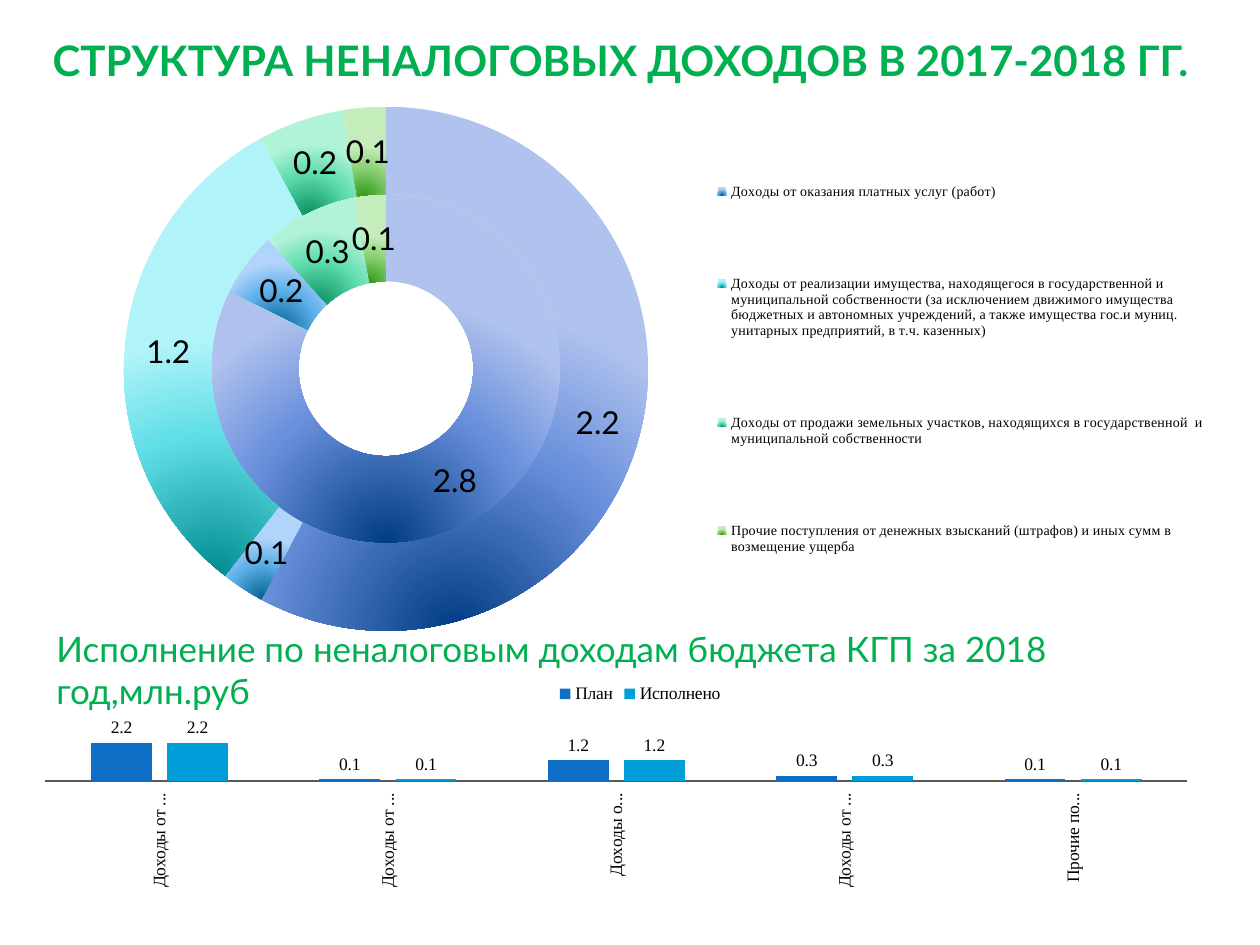
"""Build the slide on the structure of non-tax revenue for 2017-2018."""
from dataclasses import dataclass

from lxml.etree import _Element
from pptx import Presentation
from pptx.chart.chart import Chart
from pptx.chart.data import CategoryChartData
from pptx.dml.color import RGBColor
from pptx.enum.chart import (XL_CHART_TYPE, XL_LABEL_POSITION, XL_LEGEND_POSITION,
                             XL_TICK_LABEL_POSITION, XL_TICK_MARK)
from pptx.enum.text import MSO_ANCHOR, PP_ALIGN
from pptx.oxml import parse_xml
from pptx.oxml.ns import nsdecls, qn
from pptx.slide import Slide
from pptx.text.text import TextFrame
from pptx.util import Emu, Pt

SCALE = 914400 / 126
COLORS = {"title": "00B050", "outline": "20C9F8", "text": "000000",
          "axis": "595959", "plan": "0F6FC6", "actual": "009DD9"}
GRADIENTS = [("003C84", "6A90DC", "B0C2EE"), ("00608F", "5EB0EA", "B0D4FA"),
             ("008C90", "60DEE6", "B0F4FA"), ("0A9060", "60DEB0", "B0F3D6"),
             ("339A1A", "8FD47A", "C5EDBB")]
CATEGORIES = [
    "Доходы от ...",
    "Доходы от оказания платных услуг (работ)",
    "Доходы от реализации имущества, находящегося в государственной и муниципальной "
    "собственности (за исключением движимого имущества бюджетных и автономных "
    "учреждений, а также имущества гос.и муниц. унитарных предприятий, "
    "в т.ч. казенных)",
    "Доходы от продажи земельных участков, находящихся в государственной  и "
    "муниципальной собственности",
    "Прочие поступления от денежных взысканий (штрафов) и иных сумм в возмещение ущерба",
]


@dataclass
class Box:
    x: int
    y: int
    w: int
    h: int

    def emu(self) -> list[Emu]:
        return [px(n) for n in (self.x, self.y, self.w, self.h)]


@dataclass
class ChartSpec:
    kind: XL_CHART_TYPE
    box: Box
    series: list[tuple[str, list[float | None]]]
    plot: tuple[float, float, float, float]
    font: str
    size: int


def px(n: int) -> Emu:
    return Emu(round(n * SCALE))


def rgb(name: str) -> RGBColor:
    return RGBColor.from_string(COLORS[name])


def add_heading(tf: TextFrame, text: str, size: int, bold: bool, align: PP_ALIGN) -> None:
    tf.word_wrap = True
    p = tf.paragraphs[0]
    p.alignment = align
    r = p.add_run()
    r.text = text
    r.font.size, r.font.bold, r.font.name = Pt(size), bold, "Lato"
    r.font.color.rgb = rgb("title")
    r.font._element.insert(0, parse_xml(
        f'<a:ln {nsdecls("a")} w="9525"><a:solidFill>'
        f'<a:srgbClr val="{COLORS["outline"]}"/></a:solidFill></a:ln>'))


def manual_layout(frame: tuple[float, float, float, float], inner: bool) -> _Element:
    target = '<c:layoutTarget val="inner"/>' if inner else ""
    modes = '<c:xMode val="edge"/><c:yMode val="edge"/>'
    sizes = "".join(f'<c:{k} val="{v}"/>' for k, v in zip("xywh", frame))
    return parse_xml(f'<c:layout {nsdecls("c")}><c:manualLayout>{target}{modes}{sizes}'
                     "</c:manualLayout></c:layout>")


def drop_layout(parent: _Element) -> None:
    for el in parent.findall(qn("c:layout")):
        parent.remove(el)


def add_chart(s: Slide, spec: ChartSpec) -> Chart:
    data = CategoryChartData()
    data.categories = CATEGORIES
    for name, values in spec.series:
        data.add_series(name, values)
    chart = s.shapes.add_chart(spec.kind, *spec.box.emu(), data).chart
    chart.has_title = False
    chart.font.name, chart.font.size = spec.font, Pt(spec.size)
    chart.font.color.rgb = rgb("text")
    area = chart._chartSpace.chart.plotArea
    drop_layout(area)
    area.insert(0, manual_layout(spec.plot, True))
    for series in chart.plots[0].series:
        labels = series.data_labels
        labels.show_value = True
        labels.font.name, labels.font.size = spec.font, Pt(spec.size)
        labels.font.color.rgb = rgb("text")
    chart.has_legend = True
    return chart


def style_columns(chart: Chart) -> None:
    plot = chart.plots[0]
    plot.vary_by_categories = False
    plot.gap_width, plot.overlap = 150, -25
    for series, name in zip(plot.series, ("plan", "actual")):
        series.format.fill.solid()
        series.format.fill.fore_color.rgb = rgb(name)
        series.data_labels.position = XL_LABEL_POSITION.OUTSIDE_END
    axis = chart.category_axis
    axis.tick_label_position = XL_TICK_LABEL_POSITION.LOW
    axis.major_tick_mark = axis.minor_tick_mark = XL_TICK_MARK.NONE
    axis.format.line.color.rgb = rgb("axis")
    axis.format.line.width = Pt(1.5)
    axis.tick_labels.font.size = Pt(10)
    axis._element.xpath("c:txPr/a:bodyPr")[0].set("rot", "-5400000")
    chart.value_axis.has_major_gridlines = False
    chart.value_axis.minimum_scale, chart.value_axis.maximum_scale = 0, 2.5
    chart.value_axis.visible = False
    chart.legend.position = XL_LEGEND_POSITION.TOP
    chart.legend.include_in_layout = False


def radial_fill(colors: tuple[str, str, str]) -> _Element:
    stops = "".join(f'<a:gs pos="{pos}"><a:srgbClr val="{c}"/></a:gs>'
                    for pos, c in zip((0, 60000, 100000), colors))
    return parse_xml(f'<a:gradFill {nsdecls("a")}><a:gsLst>{stops}</a:gsLst>'
                     '<a:path path="circle"><a:fillToRect l="50000" t="100000" r="50000"/>'
                     "</a:path></a:gradFill>")


def style_rings(chart: Chart) -> None:
    chart.plots[0].vary_by_categories = True
    for series in chart.plots[0].series:
        for i, colors in enumerate(GRADIENTS):
            series.points[i].format.fill.background()
            sp_pr = series._element.xpath(f"c:dPt[c:idx/@val='{i}']/c:spPr")[0]
            sp_pr.replace(sp_pr[0], radial_fill(colors))
    legend = chart.legend
    legend.position = XL_LEGEND_POSITION.RIGHT
    legend.include_in_layout = True
    legend.font.name, legend.font.size = "Times New Roman", Pt(8)
    legend.font.color.rgb = rgb("text")
    el = legend._element
    drop_layout(el)
    el.find(qn("c:legendPos")).addnext(parse_xml(
        f'<c:legendEntry {nsdecls("c")}><c:idx val="0"/><c:delete val="1"/></c:legendEntry>'))
    el.find(qn("c:overlay")).addprevious(manual_layout((0.56, 0.02, 0.44, 0.98), False))


def main() -> None:
    prs = Presentation()
    prs.slide_width, prs.slide_height = px(1260), px(945)
    s = prs.slides.add_slide(prs.slide_layouts[5])

    title = s.shapes.title
    title.left, title.top, title.width, title.height = Box(15, 16, 1211, 69).emu()
    tf = title.text_frame
    tf.vertical_anchor = MSO_ANCHOR.BOTTOM
    tf.margin_left = tf.margin_right = px(6)
    tf.margin_top = tf.margin_bottom = 0
    add_heading(tf, "СТРУКТУРА НЕНАЛОГОВЫХ ДОХОДОВ В 2017-2018 ГГ.", 24, True,
                PP_ALIGN.CENTER)

    sp = s.shapes.add_textbox(*Box(44, 621, 1171, 55).emu())
    add_heading(sp.text_frame,
                "Исполнение по неналоговым доходам бюджета КГП за 2018 год,млн.руб",
                20, False, PP_ALIGN.LEFT)

    budget = [2.2, 0.1, 1.2, 0.3, 0.1]
    style_columns(add_chart(s, ChartSpec(
        XL_CHART_TYPE.COLUMN_CLUSTERED, Box(44, 670, 1191, 218),
        [("План", budget), ("Исполнено", budget)],
        (0, 0.31, 0.96, 0.2), "Times New Roman", 10)))
    style_rings(add_chart(s, ChartSpec(
        XL_CHART_TYPE.DOUGHNUT, Box(64, 96, 1150, 535),
        [("", [2.8, 0.2, None, 0.3, 0.1]), ("", [2.2, 0.1, 1.2, 0.2, 0.1])],
        (0.05, 0.02, 0.46, 0.98), "Lato", 18)))
    prs.save("out.pptx")


if __name__ == "__main__":
    main()
